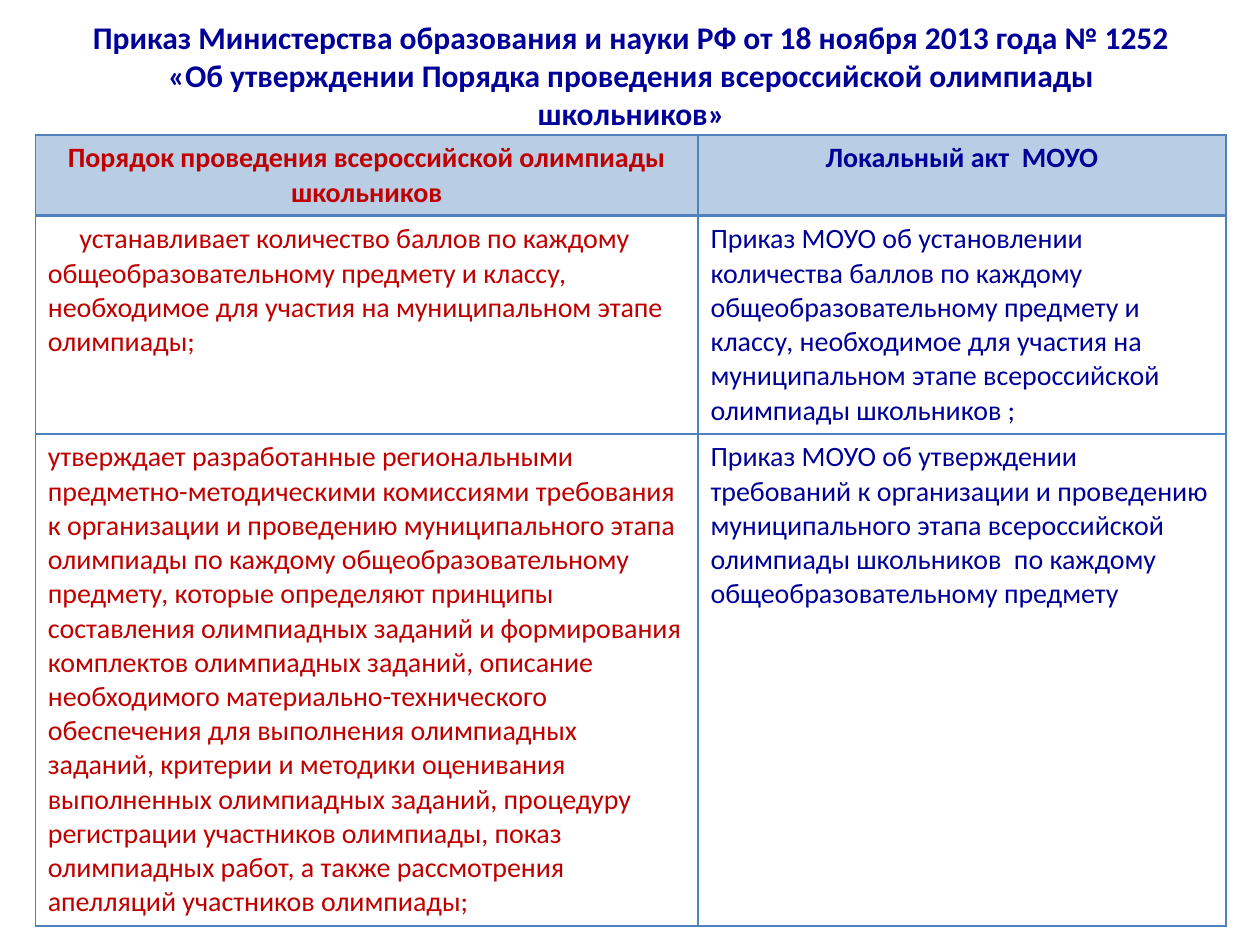
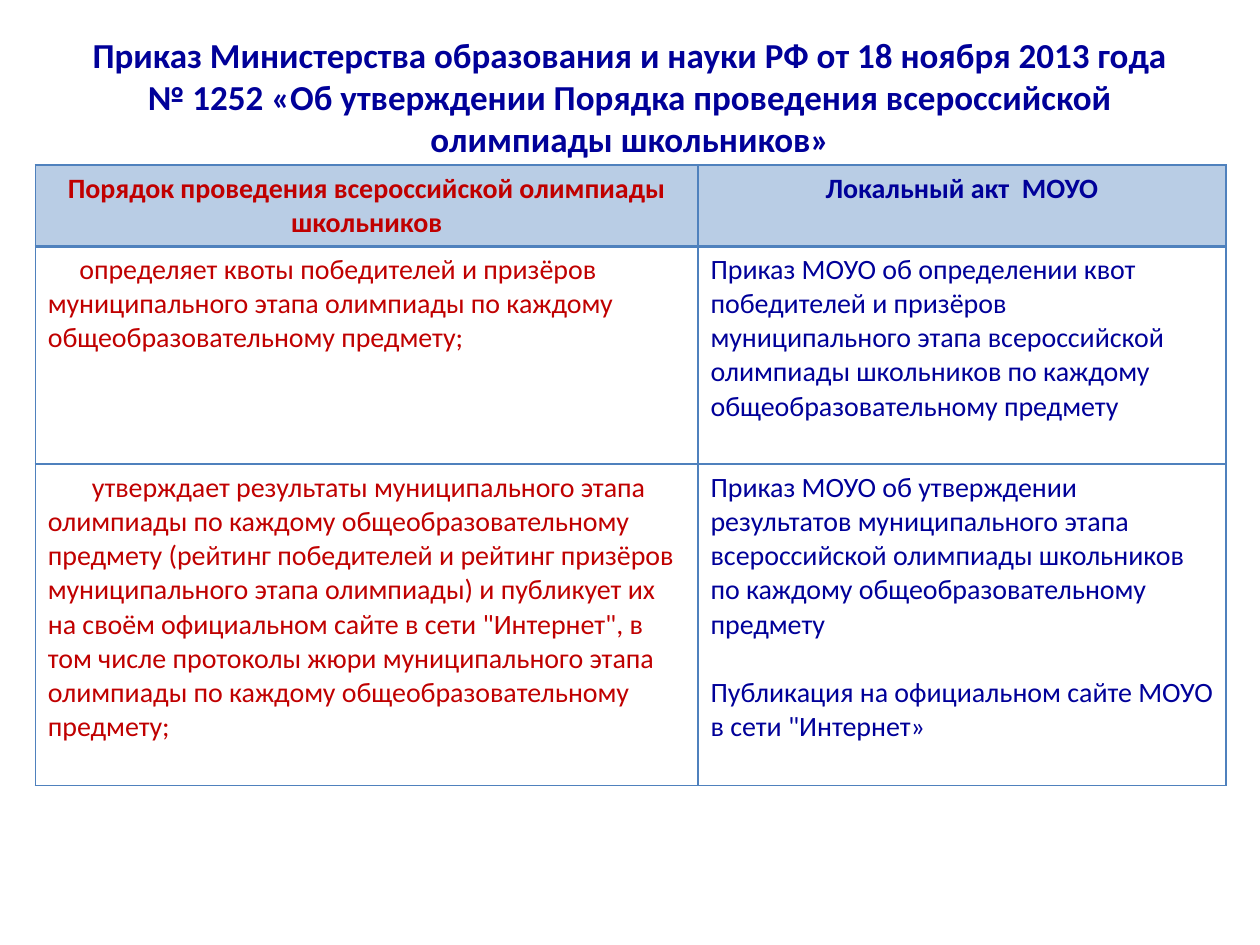
"""Build two slides that match the olympiad rules with the local acts they require."""
from dataclasses import dataclass

import pptx
import pptx.dml.color
import pptx.enum.text
import pptx.oxml
import pptx.oxml.ns
import pptx.util
from pptx.util import Inches

COLORS = {"act": "000099", "rule": "C00000", "header": "B9CDE5", "border": "4F81BD"}
FONT = "Calibri"
CELL_SIZE = 16
COLUMN_WIDTHS = (5.26, 4.19)
COLUMN_COLORS = ("rule", "act")
HEADINGS = ("Порядок проведения всероссийской олимпиады школьников", "Локальный акт  МОУО")
ORDER_TITLE = (
    "Приказ Министерства образования и науки РФ от 18 ноября 2013 года № 1252 "
    "«Об утверждении Порядка проведения всероссийской олимпиады школьников»"
)


@dataclass(frozen=True)
class Provision:
    """A rule, the local acts that answer it, and the size of their row."""

    rule: str
    acts: tuple[str, ...]
    height: float
    indent: float = 0


@dataclass(frozen=True)
class OrderSlide:
    """The title geometry and the provisions of one slide."""

    title_left: float
    title_top: float
    title_size: int
    table_top: float
    provisions: tuple[Provision, ...]


SLIDES = (
    OrderSlide(0.51, 0.13, 18, 1.07, (
        Provision(
            "устанавливает количество баллов по каждому общеобразовательному предмету и классу, "
            "необходимое для участия на муниципальном этапе олимпиады;",
            ("Приказ МОУО об установлении количества баллов по каждому общеобразовательному "
             "предмету и классу, необходимое для участия на муниципальном этапе всероссийской "
             "олимпиады школьников ;",),
            1.73, 0.25),
        Provision(
            "утверждает разработанные региональными предметно-методическими комиссиями требования "
            "к организации и проведению муниципального этапа олимпиады по каждому "
            "общеобразовательному предмету, которые определяют принципы составления олимпиадных "
            "заданий и формирования комплектов олимпиадных заданий, описание необходимого "
            "материально-технического обеспечения для выполнения олимпиадных заданий, критерии и "
            "методики оценивания выполненных олимпиадных заданий, процедуру регистрации участников "
            "олимпиады, показ олимпиадных работ, а также рассмотрения апелляций участников "
            "олимпиады;",
            ("Приказ МОУО об утверждении требований к организации и проведению муниципального "
             "этапа всероссийской олимпиады школьников  по каждому общеобразовательному предмету",),
            3.9),
    )),
    OrderSlide(0.5, 0.3, 20, 1.31, (
        Provision(
            "определяет квоты победителей и призёров муниципального этапа олимпиады по каждому "
            "общеобразовательному предмету;",
            ("Приказ МОУО об определении квот победителей и призёров муниципального этапа "
             "всероссийской олимпиады школьников по каждому общеобразовательному предмету",),
            1.73, 0.25),
        Provision(
            "утверждает результаты муниципального этапа олимпиады по каждому общеобразовательному "
            "предмету (рейтинг победителей и рейтинг призёров муниципального этапа олимпиады) и "
            "публикует их на своём официальном сайте в сети \"Интернет\", в том числе протоколы "
            "жюри муниципального этапа олимпиады по каждому общеобразовательному предмету;",
            ("Приказ МОУО об утверждении результатов муниципального этапа всероссийской олимпиады "
             "школьников по каждому общеобразовательному предмету",
             "Публикация на официальном сайте МОУО в сети \"Интернет»"),
            2.55, 0.35),
    )),
)


def style_text(frame, color: str, size: int, bold: bool, centered: bool) -> None:
    """Give every paragraph of a text frame the same look."""
    alignment = pptx.enum.text.PP_ALIGN
    for paragraph in frame.paragraphs:
        paragraph.alignment = alignment.CENTER if centered else alignment.LEFT
        for run in paragraph.runs:
            run.font.name = FONT
            run.font.size = pptx.util.Pt(size)
            run.font.bold = bold
            run.font.color.rgb = pptx.dml.color.RGBColor.from_string(COLORS[color])


def add_borders(cell, top: int, bottom: int) -> None:
    """Outline a cell, with top and bottom widths in points."""
    properties = cell._tc.get_or_add_tcPr()
    for side, width in (("L", 1), ("R", 1), ("T", top), ("B", bottom)):
        properties.append(pptx.oxml.parse_xml(
            f'<a:ln{side} {pptx.oxml.ns.nsdecls("a")} w="{pptx.util.Pt(width)}">'
            f'<a:solidFill><a:srgbClr val="{COLORS["border"]}"/></a:solidFill></a:ln{side}>'))


def fill_cell(cell, texts: tuple[str, ...], color: str, row: int, indent: float = 0) -> None:
    """Write and format one cell; row 0 is the header."""
    is_header = row == 0
    cell.text_frame.text = "\n".join(texts)
    style_text(cell.text_frame, color, CELL_SIZE, is_header, is_header)
    first, *following = cell.text_frame.paragraphs
    if indent:
        first._p.get_or_add_pPr().set("indent", str(Inches(indent)))
    for paragraph in following:
        paragraph.space_before = pptx.util.Pt(19.5)
    add_borders(cell, top=2 if row == 1 else 1, bottom=2 if is_header else 1)
    if is_header:
        cell.fill.solid()
        cell.fill.fore_color.rgb = pptx.dml.color.RGBColor.from_string(COLORS["header"])
    else:
        cell.fill.background()


def add_title(slide, order: OrderSlide) -> None:
    """Place and format the title of the ministry order."""
    title = slide.shapes.title
    title.left, title.top = Inches(order.title_left), Inches(order.title_top)
    title.width, title.height = Inches(9), Inches(0.93)
    title.text_frame.text = ORDER_TITLE
    title.text_frame.auto_size = pptx.enum.text.MSO_AUTO_SIZE.NONE
    title.text_frame.vertical_anchor = pptx.enum.text.MSO_ANCHOR.MIDDLE
    style_text(title.text_frame, "act", order.title_size, True, True)


def add_provisions(slide, order: OrderSlide) -> None:
    """Draw the table of provisions and local acts."""
    heights = (0.64, *(provision.height for provision in order.provisions))
    table = slide.shapes.add_table(
        len(heights), len(COLUMN_WIDTHS), Inches(0.28), Inches(order.table_top),
        Inches(sum(COLUMN_WIDTHS)), Inches(sum(heights))).table
    table.first_row = table.horz_banding = False
    for column, width in zip(table.columns, COLUMN_WIDTHS):
        column.width = Inches(width)
    for row, height in zip(table.rows, heights):
        row.height = Inches(height)
    for column, (heading, color) in enumerate(zip(HEADINGS, COLUMN_COLORS)):
        fill_cell(table.cell(0, column), (heading,), color, 0)
    for row, provision in enumerate(order.provisions, start=1):
        fill_cell(table.cell(row, 0), (provision.rule,), "rule", row, provision.indent)
        fill_cell(table.cell(row, 1), provision.acts, "act", row)


def main() -> None:
    """Build and save the presentation."""
    presentation = pptx.Presentation()
    presentation.slide_width, presentation.slide_height = Inches(10), Inches(7.5)
    title_only = presentation.slide_layouts.get_by_name("Title Only")
    for order in SLIDES:
        slide = presentation.slides.add_slide(title_only)
        add_title(slide, order)
        add_provisions(slide, order)
    presentation.save("out.pptx")


if __name__ == "__main__":
    main()
